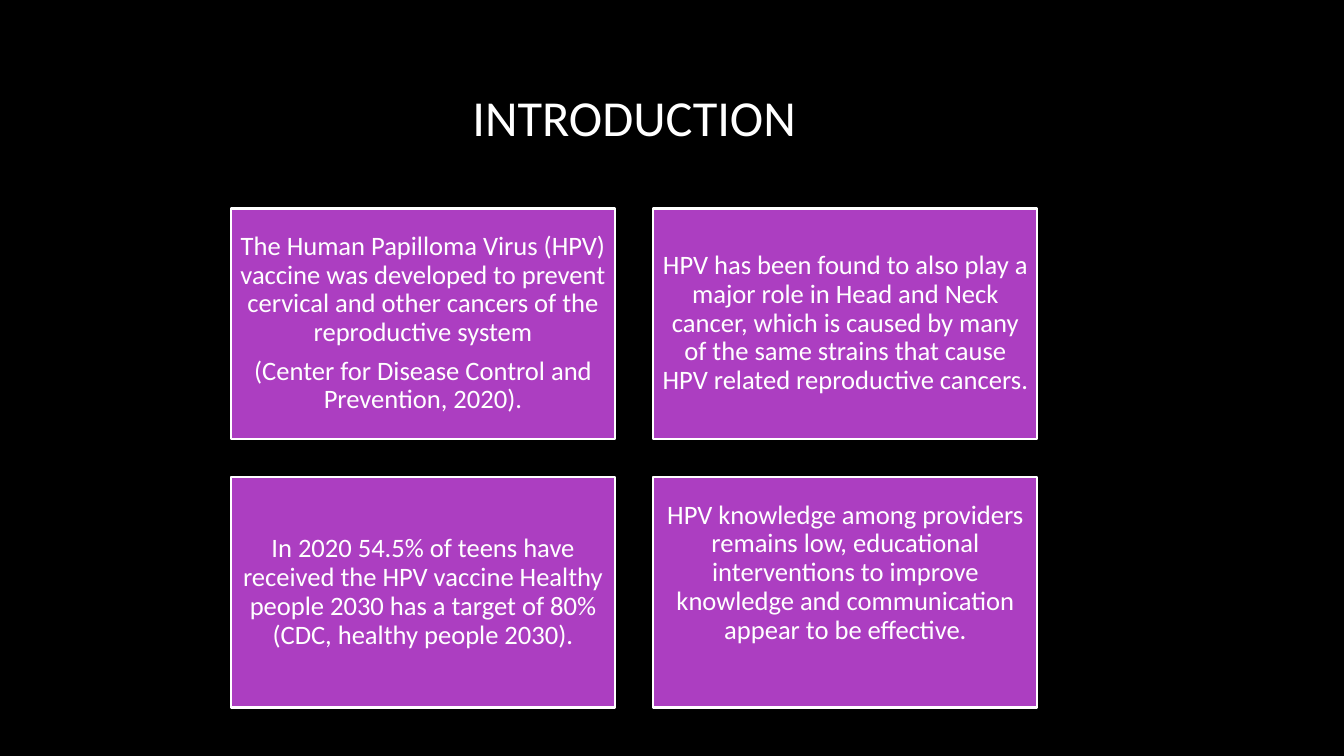
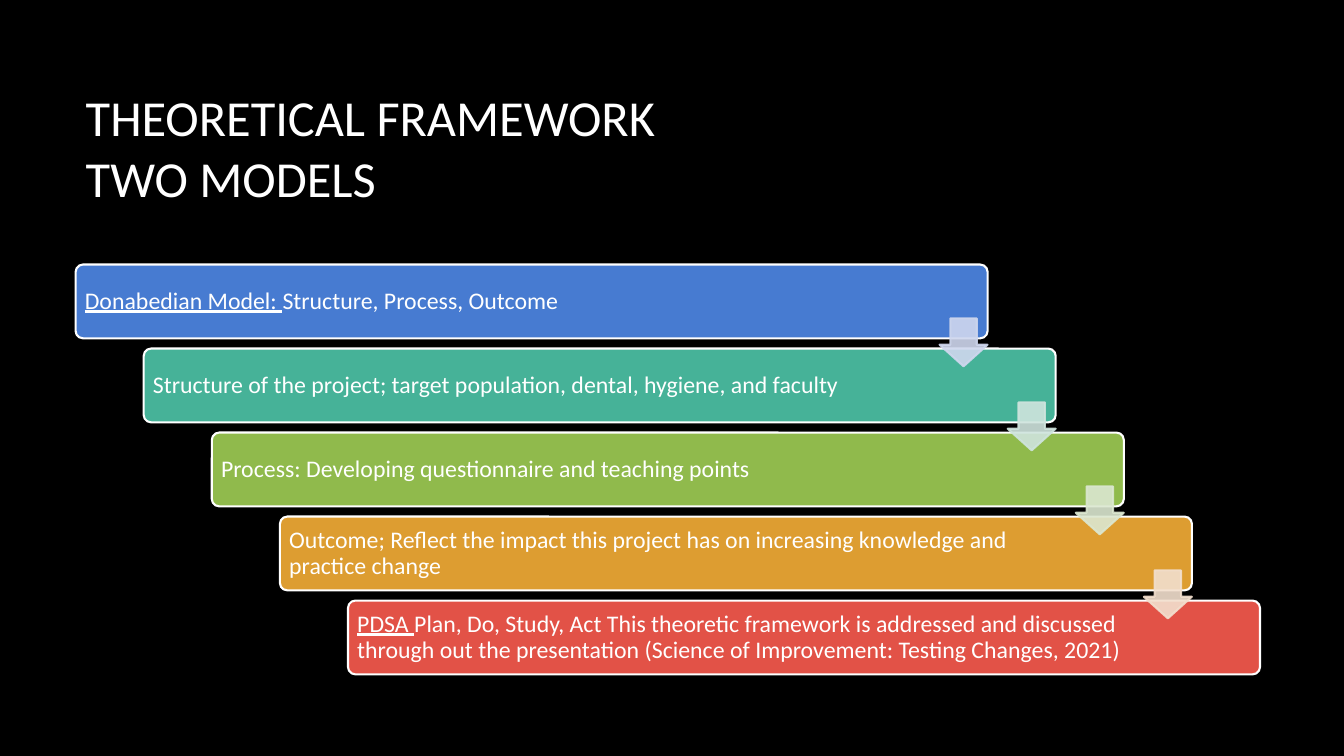
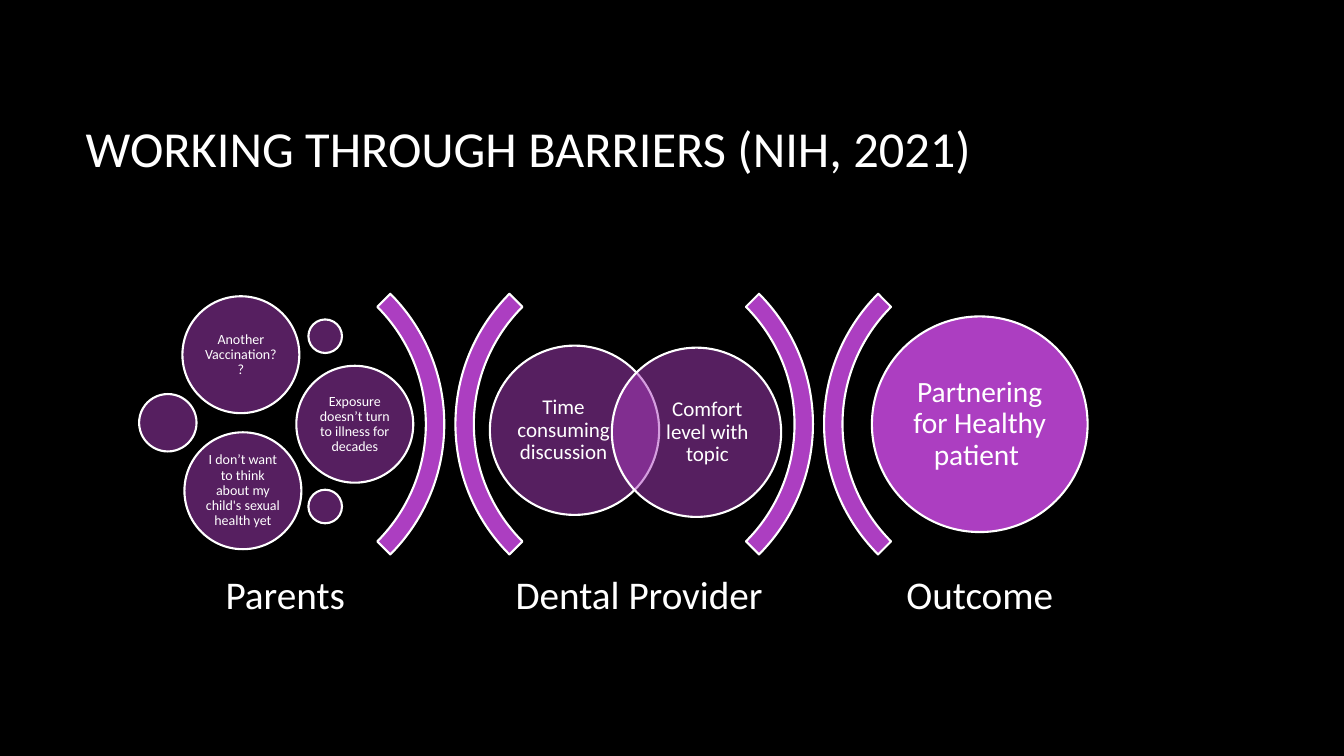
from dataclasses import dataclass

import pptx
import pptx.dml.color
import pptx.enum.shapes
import pptx.enum.text
import pptx.oxml
import pptx.oxml.ns
import pptx.util

SHAPE = pptx.enum.shapes.MSO_SHAPE
ALIGN = pptx.enum.text.PP_ALIGN
MIDDLE = pptx.enum.text.MSO_ANCHOR.MIDDLE
Pt = pptx.util.Pt

WIDTH, HEIGHT = pptx.util.Inches(13.33), pptx.util.Inches(7.5)
COLUMNS = 160
UNIT = WIDTH / COLUMNS


@dataclass(frozen=True)
class Theme:
    font: str = "Calibri"
    background: str = "000000"
    text: str = "FFFFFF"
    accent: str = "AC3EC1"
    steps: tuple = ("477BD1", "46B298", "90BA4C", "DD9D31", "E25247")
    arrows: tuple = ("CFD7EE", "CFE4DD", "DBE7D0", "F2DFCE")
    line: float = 1.5
    title: int = 36
    label: int = 28
    outcome: int = 21
    card: int = 19
    step: int = 17
    venn: int = 15
    bubble: int = 10


@dataclass(frozen=True)
class Box:
    x: float
    y: float
    w: float
    h: float

    def sub(self, x, y, w, h):
        return Box(self.x + x, self.y + y, w, h)

    def emu(self):
        return [round(v * UNIT) for v in (self.x, self.y, self.w, self.h)]


THEME = Theme()
TITLE = Box(9, 8, 133, 19)
INTRO_TITLE = Box(9, 6.6, 133, 14.6)


def rgb(value):
    return pptx.dml.color.RGBColor.from_string(value)


def set_alpha(fill_parent, percent):
    color = fill_parent.find(".//" + pptx.oxml.ns.qn("a:srgbClr"))
    alpha = pptx.oxml.parse_xml(
        f'<a:alpha {pptx.oxml.ns.nsdecls("a")} val="{percent * 1000}"/>')
    color.append(alpha)


def write(sp, paragraphs, size, align=ALIGN.CENTER, insets=(1, 1, 1, 1), spacing=0.9):
    tf = sp.text_frame
    tf.word_wrap = True
    tf.vertical_anchor = MIDDLE
    tf.margin_left, tf.margin_top, tf.margin_right, tf.margin_bottom = (
        round(v * UNIT) for v in insets)
    for i, runs in enumerate(paragraphs):
        p = tf.add_paragraph() if i else tf.paragraphs[0]
        p.alignment = align
        p.line_spacing = spacing
        if i < len(paragraphs) - 1:
            p.space_after = Pt(7)
        if isinstance(runs, str):
            p.text = runs
        else:
            for text, underline in runs:
                r = p.add_run()
                r.text = text
                r.font.underline = underline
        for r in p.runs:
            r.font.name = THEME.font
            r.font.size = Pt(size)
            r.font.color.rgb = rgb(THEME.text)


def add_text(slide, box, text, size, **style):
    write(slide.shapes.add_textbox(*box.emu()), [text], size, **style)


def add_shape(slide, kind, box, fill=THEME.accent, line=THEME.text, alpha=None):
    sp = slide.shapes.add_shape(kind, *box.emu())
    sp.shadow.inherit = False
    sp.fill.solid()
    sp.fill.fore_color.rgb = rgb(fill)
    sp.line.color.rgb = rgb(line)
    sp.line.width = Pt(THEME.line)
    if alpha:
        set_alpha(sp.element.spPr.find(pptx.oxml.ns.qn("a:solidFill")), alpha)
    return sp


def add_slide(prs, title, box=TITLE, align=ALIGN.LEFT):
    slide = prs.slides.add_slide(prs.slide_layouts[6])
    add_text(slide, box, title, THEME.title, align=align,
             insets=(1.2, 0.6, 1.2, 0.6), spacing=1)
    return slide


def add_cards(slide, box, cards):
    w = box.w / 2.1
    h, gap = 0.6 * w, 0.1 * w
    for i, (paragraphs, bottom) in enumerate(cards):
        row, col = divmod(i, 2)
        sp = add_shape(slide, SHAPE.RECTANGLE,
                       box.sub(col * (w + gap), row * (h + gap), w, h))
        write(sp, paragraphs, THEME.card, insets=(1, 1, 1, bottom))


def add_staircase(slide, box, steps):
    w, h = 0.77 * box.w, 0.18 * box.h
    dx, dy = (box.w - w) / (len(steps) - 1), (box.h - h) / (len(steps) - 1)
    places = [box.sub(i * dx, i * dy, w, h) for i in range(len(steps))]
    for place, runs, color in zip(places, steps, THEME.steps):
        sp = add_shape(slide, SHAPE.ROUNDED_RECTANGLE, place, color)
        sp.adjustments[0] = 0.1
        write(sp, [runs], THEME.step, ALIGN.LEFT, (0.84, 0.84, 14.8, 0.84))
    side = 0.65 * h
    for place, color in zip(places, THEME.arrows):
        sp = add_shape(slide, SHAPE.DOWN_ARROW,
                       place.sub(w - side, 0.73 * h, side, side), color, color, 90)
        set_alpha(sp.line._get_or_add_ln(), 90)
        sp.adjustments[0], sp.adjustments[1] = 0.55, 0.45


def add_arcs(slide, box):
    side = 0.33 * box.w
    for share, rotation in ((0, 90), (0.34, 270), (0.33, 90), (0.67, 270)):
        sp = add_shape(slide, SHAPE.BLOCK_ARC,
                       box.sub(share * box.w, 0, side, side))
        sp.rotation = rotation
        for i, value in enumerate((135, 189, 0.05)):
            sp.adjustments[i] = value


def add_stage(slide, box, label, circles, size, insets, alpha=None):
    for i, (x, y, d, text) in enumerate(circles):
        sp = add_shape(slide, SHAPE.OVAL, box.sub(x, y, d, d), alpha=alpha)
        if text:
            write(sp, [text], size, insets=insets[i % len(insets)])
    add_text(slide, box.sub(0, 38.16, box.w, 8.76), label, THEME.label,
             insets=(1.44,) * 4)


def build_introduction(prs):
    slide = add_slide(prs, "INTRODUCTION", INTRO_TITLE, ALIGN.CENTER)
    add_cards(slide, Box(27.5, 24.83, 96, 59.43), [
        (["The Human Papilloma Virus (HPV) vaccine was developed to prevent cervical "
          "and other cancers of the reproductive system",
          "(Center for Disease Control and Prevention, 2020)."], 1),
        (["HPV has been found to also play a major role in Head and Neck cancer, which "
          "is caused by many of the same strains that cause HPV related reproductive "
          "cancers."], 1),
        (["In 2020 54.5% of teens have received the HPV vaccine Healthy people 2030 "
          "has a target of 80% (CDC, healthy people 2030)."], 1),
        (["HPV knowledge among providers remains low, educational interventions to "
          "improve knowledge and communication appear to be effective."], 5.6),
    ])


def build_framework(prs):
    slide = add_slide(prs, "THEORETICAL FRAMEWORK\vTWO MODELS")
    add_staircase(slide, Box(9, 31.5, 141, 48.8), [
        [("Donabedian Model: ", True), ("Structure, Process, Outcome", False)],
        "Structure of the project; target population, dental, hygiene, and faculty",
        "Process: Developing questionnaire and teaching points",
        "Outcome; Reflect the impact this project has on increasing knowledge and "
        "practice change",
        [("PDSA ", True),
         ("Plan, Do, Study, Act This theoretic framework is addressed and discussed "
          "through out the presentation (Science of Improvement: Testing Changes, 2021)",
          False)],
    ])


def build_barriers(prs):
    slide = add_slide(prs, "WORKING THROUGH BARRIERS (NIH, 2021)")
    box = Box(9, 28.56, 133, 43.9)
    add_arcs(slide, box)
    parents, provider, outcome = (
        box.sub(x, 0, 33.36, box.h) for x in (8.28, 50.4, 90.96))
    large, medium, small = 13.92, 6.84, 4
    add_stage(slide, parents, "Parents", [
        (4.44, 6.72, large, "Another Vaccination??"),
        (-0.72, 18.36, medium, ""),
        (19.44, 9.48, small, ""),
        (18, 15, large, "Exposure doesn’t turn to illness for decades"),
        (19.44, 29.76, small, ""),
        (4.68, 22.92, large, "I don’t want to think about my child's sexual health yet"),
    ], THEME.bubble, [(0.48,) * 4], 50)
    add_stage(slide, provider, "Dental Provider", [
        (-1.08, 12.6, 20.16, "Time consuming discussion"),
        (13.44, 12.84, 20.16, "Comfort level with topic"),
    ], THEME.venn, [(0, 0, 2.6, 0), (2.6, 0, 0, 0)], 50)
    add_stage(slide, outcome, "Outcome", [
        (3.84, 9.12, 25.68, "Partnering for Healthy patient "),
    ], THEME.outcome, [(1.08,) * 4])


def main():
    prs = pptx.Presentation()
    prs.slide_width, prs.slide_height = WIDTH, HEIGHT
    fill = prs.slide_master.background.fill
    fill.solid()
    fill.fore_color.rgb = rgb(THEME.background)
    build_introduction(prs)
    build_framework(prs)
    build_barriers(prs)
    prs.save("out.pptx")


if __name__ == "__main__":
    main()
